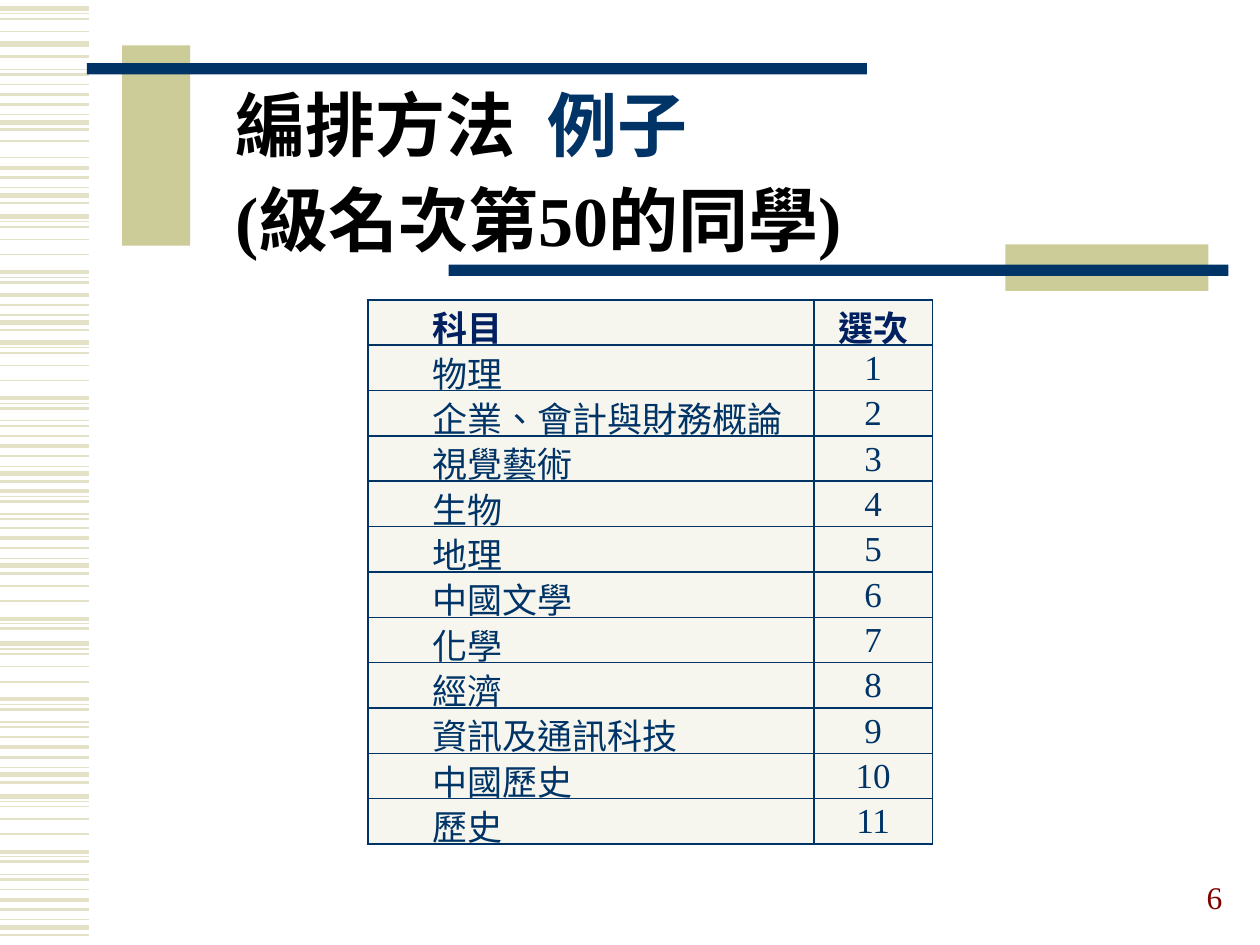
from dataclasses import dataclass
from typing import Optional

from lxml.etree import SubElement
from pptx import Presentation
from pptx.dml.color import RGBColor
from pptx.enum.lang import MSO_LANGUAGE_ID
from pptx.enum.shapes import MSO_CONNECTOR, MSO_SHAPE
from pptx.enum.text import MSO_ANCHOR, PP_ALIGN
from pptx.oxml.ns import qn
from pptx.util import Inches, Pt

NAVY = RGBColor(0x00, 0x33, 0x66)
HEADER_NAVY = RGBColor(0x00, 0x20, 0x60)
KHAKI = RGBColor(0xCC, 0xCC, 0x99)
PALE_KHAKI = RGBColor(0xE3, 0xE2, 0xC7)
CELL_FILL = RGBColor(0xF6, 0xF6, 0xEF)
MAROON = RGBColor(0x80, 0x00, 0x00)
BLACK = RGBColor(0x00, 0x00, 0x00)
FONT_NAME = "Times New Roman"
STRIPE_LENGTH = 0.71
ROW_HEIGHT = 0.36


@dataclass(frozen=True)
class Stripe:
    offset: float
    weight: float


@dataclass(frozen=True)
class StripeBand:
    top: float
    pattern: tuple[Stripe, ...]
    first: int = 0
    last: Optional[int] = None


@dataclass(frozen=True)
class Bar:
    left: float
    top: float
    width: float
    height: float
    color: RGBColor


WIDE_PATTERN = (
    Stripe(0, 3), Stripe(0.04, 0.75), Stripe(0.08, 1), Stripe(0.18, 1), Stripe(0.3, 1),
    Stripe(0.44, 2.25), Stripe(0.48, 0.75), Stripe(0.52, 1.5), Stripe(0.62, 0.75), Stripe(0.66, 1.5),
)
NARROW_PATTERN = (
    Stripe(0, 1), Stripe(0.08, 2.25), Stripe(0.16, 1.5),
    Stripe(0.24, 0.75), Stripe(0.3, 3), Stripe(0.36, 1.5),
)
STRIPE_BANDS = (
    *(StripeBand(top, WIDE_PATTERN) for top in (2.72, 5.11, 6.32)),
    StripeBand(0.07, WIDE_PATTERN, last=4),
    StripeBand(-0.07, WIDE_PATTERN, first=7),
    StripeBand(1.72, WIDE_PATTERN, last=8),
    StripeBand(3.46, WIDE_PATTERN, first=5),
    StripeBand(4.47, WIDE_PATTERN, first=3, last=8),
    *(StripeBand(top, NARROW_PATTERN) for top in (0.67, 1.25, 3.46, 4.19, 5.85, 7.06)),
    StripeBand(2.26, NARROW_PATTERN, first=1),
    StripeBand(0, (Stripe(0.35, 3), Stripe(1.12, 1))),
)
BARS = (
    Bar(0.97, 0.36, 0.54, 1.59, KHAKI),
    Bar(0.69, 0.5, 6.19, 0.09, NAVY),
    Bar(7.98, 1.94, 1.61, 0.37, KHAKI),
    Bar(3.56, 2.1, 6.19, 0.09, NAVY),
)
SUBJECTS = (
    "物理", "企業、會計與財務概論", "視覺藝術", "生物", "地理", "中國文學",
    "化學", "經濟", "資訊及通訊科技", "中國歷史", "歷史",
)


def add_run(paragraph, text: str, *, size: float, color: RGBColor, bold: bool = False) -> None:
    run = paragraph.add_run()
    run.text = text
    font = run.font
    font.name = FONT_NAME
    font.size = Pt(size)
    font.bold = bold
    font.color.rgb = color
    font.language_id = MSO_LANGUAGE_ID.TRADITIONAL_CHINESE


def add_stripe(slide, top: float, weight: float) -> None:
    connector = slide.shapes.add_connector(
        MSO_CONNECTOR.STRAIGHT, Inches(0), Inches(top), Inches(STRIPE_LENGTH), Inches(top)
    )
    connector.line.color.rgb = PALE_KHAKI
    connector.line.width = Pt(weight)
    SubElement(connector._element.spPr, qn("a:effectLst"))


def add_bar(slide, bar: Bar) -> None:
    shape = slide.shapes.add_shape(
        MSO_SHAPE.RECTANGLE, Inches(bar.left), Inches(bar.top), Inches(bar.width), Inches(bar.height)
    )
    shape.shadow.inherit = False
    shape.fill.solid()
    shape.fill.fore_color.rgb = bar.color
    shape.line.fill.background()


def fill_title(slide) -> None:
    title = slide.shapes.title
    title.left, title.top = Inches(1.77), Inches(0.6)
    title.width, title.height = Inches(7.72), Inches(1.78)
    text_frame = title.text_frame
    text_frame.vertical_anchor = MSO_ANCHOR.TOP
    lines = (
        (("編排方法  ", BLACK), ("例子", NAVY)),
        (("(級名次第50的同學)", BLACK),),
    )
    for index, line in enumerate(lines):
        paragraph = text_frame.add_paragraph() if index else text_frame.paragraphs[0]
        paragraph.alignment = PP_ALIGN.LEFT
        paragraph.space_before = Pt(6)
        for text, color in line:
            add_run(paragraph, text, size=40, color=color, bold=True)


def add_slide_number(slide, number: str) -> None:
    box = slide.shapes.add_textbox(Inches(7.4), Inches(6.82), Inches(2.4), Inches(0.5))
    box.text_frame.word_wrap = True
    box.text_frame.vertical_anchor = MSO_ANCHOR.BOTTOM
    paragraph = box.text_frame.paragraphs[0]
    paragraph.alignment = PP_ALIGN.RIGHT
    add_run(paragraph, number, size=18, color=MAROON)


def format_cell(cell) -> None:
    properties = cell._tc.get_or_add_tcPr()
    for side in ("a:lnL", "a:lnR", "a:lnT", "a:lnB"):
        border = SubElement(properties, qn(side), w=str(Pt(1)))
        border_fill = SubElement(border, qn("a:solidFill"))
        SubElement(border_fill, qn("a:srgbClr"), val=str(NAVY))
    cell.fill.solid()
    cell.fill.fore_color.rgb = CELL_FILL
    cell.vertical_anchor = MSO_ANCHOR.MIDDLE
    cell.margin_left = cell.margin_right = cell.margin_top = Inches(0.01)
    cell.margin_bottom = 0


def add_subject_table(slide) -> None:
    rows = [("科目", "選次")] + [(subject, str(rank)) for rank, subject in enumerate(SUBJECTS, 1)]
    table = slide.shapes.add_table(
        len(rows), 2, Inches(2.92), Inches(2.38), Inches(4.48), Inches(ROW_HEIGHT * len(rows))
    ).table
    table.first_row = table.horz_banding = False
    table.columns[0].width = Inches(3.54)
    table.columns[1].width = Inches(0.94)
    for row_index, row in enumerate(rows):
        table.rows[row_index].height = Inches(ROW_HEIGHT)
        is_header = row_index == 0
        for column_index, text in enumerate(row):
            cell = table.cell(row_index, column_index)
            format_cell(cell)
            paragraph = cell.text_frame.paragraphs[0]
            if column_index == 0:
                paragraph.level = 1
                paragraph._p.get_or_add_pPr().set("marL", str(Inches(0.5)))
            else:
                paragraph.alignment = PP_ALIGN.CENTER
            add_run(paragraph, text, size=20, color=HEADER_NAVY if is_header else NAVY, bold=is_header)


def main() -> None:
    presentation = Presentation()
    presentation.slide_width, presentation.slide_height = Inches(10), Inches(7.5)
    slide = presentation.slides.add_slide(presentation.slide_layouts[5])
    for band in STRIPE_BANDS:
        for stripe in band.pattern[band.first:band.last]:
            add_stripe(slide, band.top + stripe.offset, stripe.weight)
    for bar in BARS:
        add_bar(slide, bar)
    fill_title(slide)
    add_slide_number(slide, "6")
    add_subject_table(slide)
    presentation.save("out.pptx")


if __name__ == "__main__":
    main()
